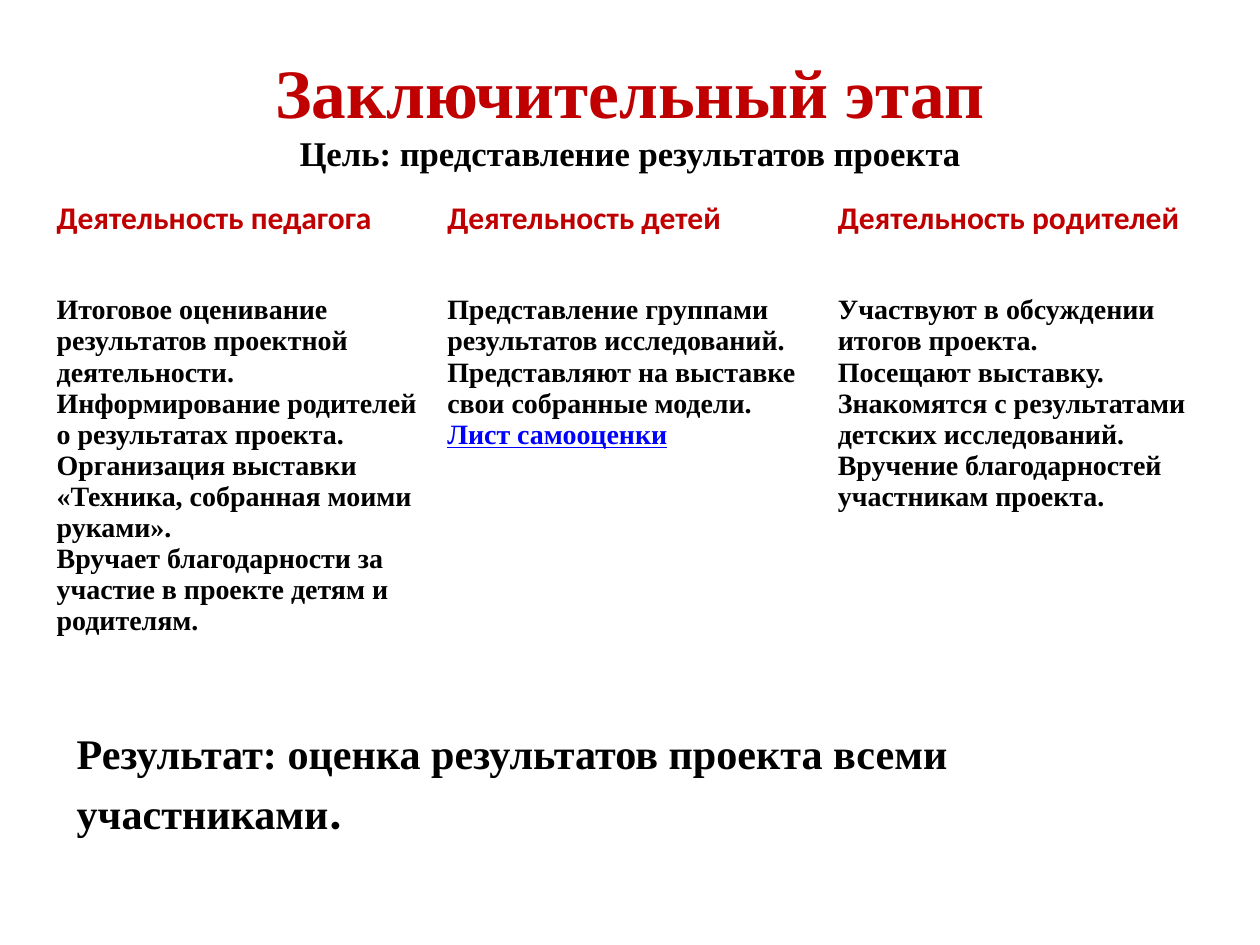
import pptx
import pptx.util
import pptx.dml.color
import pptx.enum.text
import pptx.oxml
import pptx.oxml.ns
from lxml import etree

Inches = pptx.util.Inches
Pt = pptx.util.Pt
RGBColor = pptx.dml.color.RGBColor
RED = RGBColor(0xC0, 0x00, 0x00)
BLACK = RGBColor(0x00, 0x00, 0x00)
BLUE = RGBColor(0x00, 0x00, 0xFF)
WHITE = RGBColor(0xFF, 0xFF, 0xFF)
SERIF = "Times New Roman"
SANS = "Calibri"


def write(para, text, size=16, font=SERIF, color=BLACK, line=False):
    run = para.add_run()
    run.text = text
    run.font.size = Pt(size)
    run.font.name = font
    run.font.bold = True
    run.font.underline = line
    run.font.color.rgb = color


def edge(cell, side, width):
    props = cell._tc.get_or_add_tcPr()
    line = etree.SubElement(props, pptx.oxml.ns.qn("a:ln" + side), w=str(Pt(width)))
    fill = etree.SubElement(line, pptx.oxml.ns.qn("a:solidFill"))
    etree.SubElement(fill, pptx.oxml.ns.qn("a:srgbClr"), val=str(WHITE))


deck = pptx.Presentation()
deck.slide_width = Inches(10)
deck.slide_height = Inches(7.5)
slide = deck.slides.add_slide(deck.slide_layouts[6])

title = slide.shapes.add_textbox(Inches(0.75), Inches(0.36), Inches(8.5), Inches(1.05))
frame = title.text_frame
frame.word_wrap = True
frame.vertical_anchor = pptx.enum.text.MSO_ANCHOR.MIDDLE
para = frame.paragraphs[0]
para.alignment = pptx.enum.text.PP_ALIGN.CENTER
write(para, "Заключительный этап", size=39.6, color=RED)
para.add_line_break()
write(para, "Цель: представление результатов проекта", size=19.8)

result = slide.shapes.add_textbox(Inches(0.51), Inches(5.72), Inches(9.29), Inches(0.79))
frame = result.text_frame
frame.word_wrap = True
para = frame.paragraphs[0]
write(para, "Результат: оценка результатов проекта всеми участниками", size=24.1)
write(para, ".", size=29.6, font=SANS)

heads = ["Деятельность педагога", "Деятельность детей", "Деятельность родителей"]
tasks = [
    [
        "Итоговое оценивание результатов проектной деятельности.",
        "Информирование родителей о результатах проекта.",
        "Организация выставки «Техника, собранная моими руками».",
        "Вручает благодарности за участие в проекте детям и родителям.",
    ],
    [
        "Представление группами результатов исследований.",
        "Представляют на выставке свои собранные модели.",
        "Лист самооценки",
    ],
    [
        "Участвуют в обсуждении итогов проекта.",
        "Посещают выставку.",
        "Знакомятся с результатами детских исследований.",
        "Вручение благодарностей участникам проекта.",
    ],
]

grid = slide.shapes.add_table(2, 3, Inches(0.35), Inches(1.53), Inches(9.3), Inches(3.8)).table
grid.rows[0].height = Inches(0.76)
grid.rows[1].height = Inches(3.04)
for col, (head, items) in enumerate(zip(heads, tasks)):
    grid.columns[col].width = Inches(3.1)
    top, body = grid.cell(0, col), grid.cell(1, col)
    write(top.text_frame.paragraphs[0], head, size=18, font=SANS, color=RED)
    for num, item in enumerate(items):
        frame = body.text_frame
        para = frame.add_paragraph() if num else frame.paragraphs[0]
        link = item == "Лист самооценки"
        write(para, item, color=BLUE if link else BLACK, line=link)
    for cell, base in ((top, 3), (body, 1)):
        for side, width in (("L", 1), ("R", 1), ("T", 1), ("B", base)):
            edge(cell, side, width)
        cell.fill.background()

deck.save("out.pptx")
